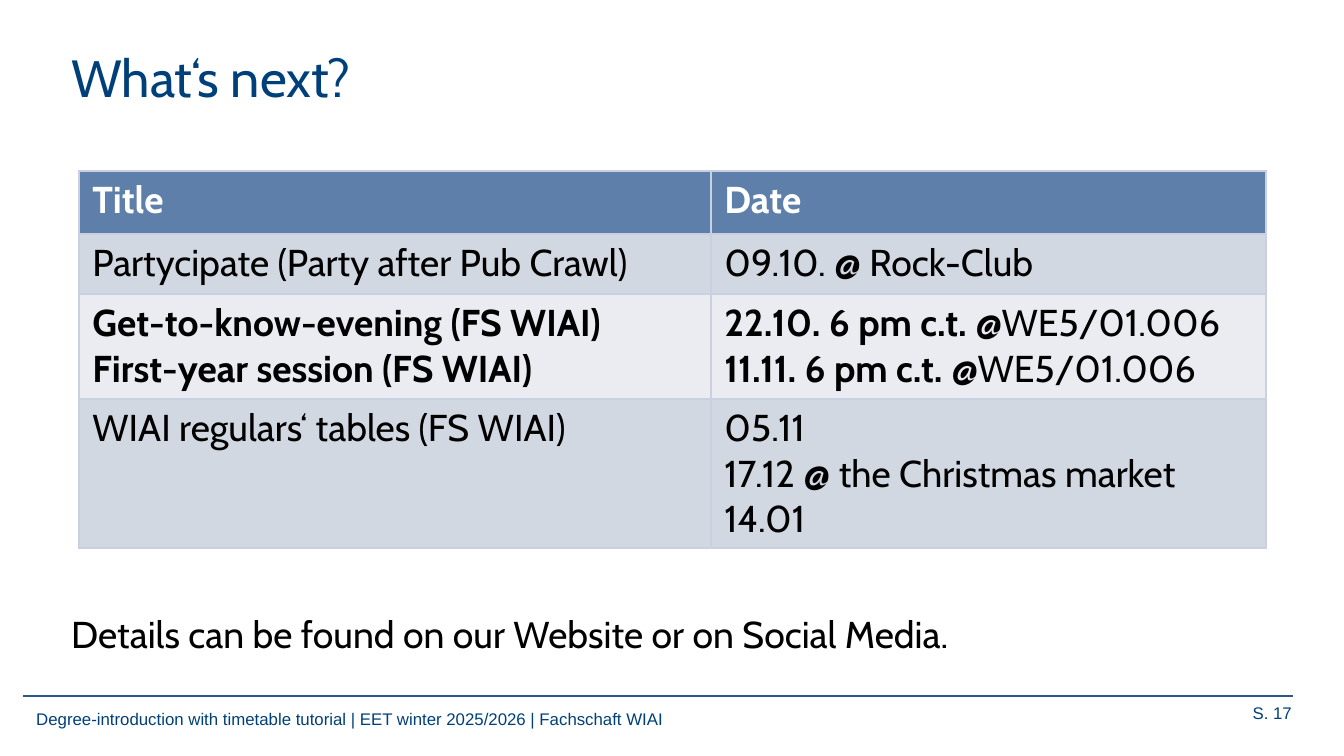
"""Build the "What's next?" slide with a table of upcoming dates."""
from lxml.etree import SubElement
from pptx import Presentation
from pptx.dml.color import RGBColor
from pptx.enum.shapes import MSO_CONNECTOR
from pptx.enum.text import MSO_ANCHOR, PP_ALIGN
from pptx.oxml import parse_xml
from pptx.oxml.ns import nsdecls, qn
from pptx.util import Pt

SCALE = 914400 / 134.4
NAVY = RGBColor(0x00, 0x40, 0x7A)
RULE = RGBColor(0x2C, 0x58, 0x84)
BLACK = RGBColor(0x00, 0x00, 0x00)
WHITE = RGBColor(0xFF, 0xFF, 0xFF)
HEADER = RGBColor(0x5D, 0x7F, 0xAA)
BAND_DARK = RGBColor(0xD2, 0xD8, 0xE2)
BAND_LIGHT = RGBColor(0xEA, 0xEC, 0xF1)
BORDER = RGBColor(0xC8, 0xD0, 0xE2)


def px(length):
    """Turn px into EMU."""
    return round(length * SCALE)


def add_run(paragraph, text, font, size, color, bold=False):
    """Append one formatted run."""
    run = paragraph.add_run()
    run.text = text
    run.font.name = font
    run.font.size = Pt(size)
    run.font.bold = bold
    run.font.color.rgb = color


presentation = Presentation()
presentation.slide_width = px(1344)
presentation.slide_height = px(756)
slide = presentation.slides.add_slide(presentation.slide_layouts[6])

texts = [
    ("Degree-introduction with timetable tutorial | EET winter 2025/2026 | Fachschaft WIAI",
     (23, 702, 988, 26), "Arial", 9, NAVY, PP_ALIGN.LEFT),
    ("S. 17", (1148, 696, 157, 34), "Arial", 9, NAVY, PP_ALIGN.RIGHT),
    ("What‘s next?", (58, 39, 1079, 126), "Cabin", 28, NAVY, PP_ALIGN.LEFT),
    ("Details can be found on our Website or on Social Media.",
     (58, 605, 984, 59), "Cabin", 20, BLACK, PP_ALIGN.LEFT),
]
for text, box, font, size, color, alignment in texts:
    shape = slide.shapes.add_textbox(*map(px, box))
    shape.text_frame.word_wrap = True
    shape.text_frame.vertical_anchor = MSO_ANCHOR.TOP
    paragraph = shape.text_frame.paragraphs[0]
    paragraph.alignment = alignment
    add_run(paragraph, text, font, size, color)

footer_line = slide.shapes.add_connector(
    MSO_CONNECTOR.STRAIGHT, px(23), px(696), px(1293), px(696))
footer_line.line.color.rgb = RULE
footer_line.line.width = Pt(0.75)
SubElement(footer_line._element.spPr, qn("a:effectLst"))

rows = [
    (63, HEADER, WHITE, [[[("Title", True)]], [[("Date", True)]]]),
    (60, BAND_DARK, BLACK, [
        [[("Partycipate (Party after Pub Crawl)", False)]],
        [[("09.10. @ Rock-Club", False)]],
    ]),
    (105, BAND_LIGHT, BLACK, [
        [[("Get-to-know-evening (FS WIAI)", True)],
         [("First-year session (FS WIAI)", True)]],
        [[("22.10. 6 pm c.t. ", True), ("@WE5/01.006", False)],
         [("11.11. 6 pm c.t. ", True), ("@WE5/01.006", False)]],
    ]),
    (149, BAND_DARK, BLACK, [
        [[("WIAI regulars‘ tables (FS WIAI)", False)]],
        [[("05.11", False)], [("17.12 @ the Christmas market", False)], [("14.01", False)]],
    ]),
]
columns = [632, 555]
table_height = sum(row[0] for row in rows)
table = slide.shapes.add_table(
    len(rows), len(columns), px(79), px(171), px(sum(columns)), px(table_height)).table
for column, width in zip(table.columns, columns):
    column.width = px(width)

for row_index, (height, fill, color, cells) in enumerate(rows):
    table.rows[row_index].height = px(height)
    for column_index, lines in enumerate(cells):
        cell = table.cell(row_index, column_index)
        properties = cell._tc.get_or_add_tcPr()
        for side in ("lnL", "lnR", "lnT", "lnB"):
            properties.append(parse_xml(
                f'<a:{side} {nsdecls("a")} w="{Pt(1)}"><a:solidFill>'
                f'<a:srgbClr val="{BORDER}"/></a:solidFill></a:{side}>'))
        cell.fill.solid()
        cell.fill.fore_color.rgb = fill
        for line_index, runs in enumerate(lines):
            frame = cell.text_frame
            paragraph = frame.add_paragraph() if line_index else frame.paragraphs[0]
            for text, bold in runs:
                add_run(paragraph, text, "Cabin", 20, color, bold)

presentation.save("out.pptx")
